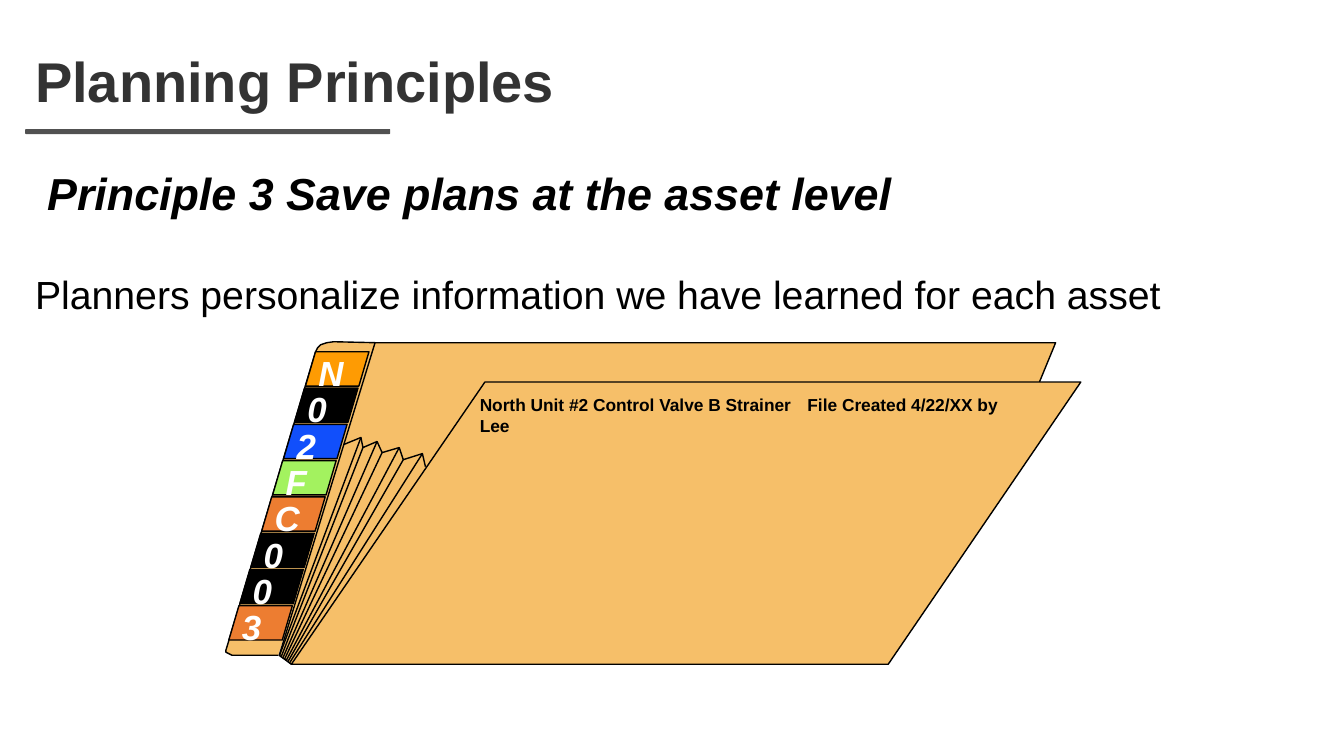
from lxml import etree
from pptx import Presentation
from pptx.dml.color import RGBColor
from pptx.enum.shapes import MSO_CONNECTOR, MSO_SHAPE
from pptx.enum.text import MSO_ANCHOR
from pptx.oxml.ns import qn
from pptx.util import Inches, Pt

TITLE = "Planning Principles"
PRINCIPLE = "Principle 3 Save plans at the asset level"
STATEMENT = "Planners personalize information we have learned for each asset"
FILE_LABEL = "North Unit #2 Control Valve B Strainer\tFile Created 4/22/XX by Lee"

TAGS = [("N", "FE9B03"), ("0", "000000"), ("2", "114FFB"), ("F", "A3F25F"),
        ("C", "ED7D31"), ("0", "000000"), ("0", "000000"), ("3", "ED7D31")]

MANILA = "F6BF69"
BLACK = "000000"
WHITE = "FFFFFF"

SPINE = [(3.73, 3.4), (3.31, 3.39), (3.24, 3.4), (3.18, 3.42), (3.15, 3.45),
         (3.13, 3.49), (2.25, 6.42), (2.24, 6.45), (2.24, 6.47), (2.26, 6.48),
         (2.3, 6.5), (2.76, 6.5)]
BACK_COVER = [(2.89, 6.59), (2.77, 6.5), (3.72, 3.4), (10.47, 3.4), (10.31, 3.79)]
FRONT_COVER = [(4.81, 3.79), (2.89, 6.59), (8.81, 6.59), (10.72, 3.79)]
PLEATS = [(3.41, 4.41), (3.58, 4.34), (3.6, 4.44), (3.74, 4.38), (3.79, 4.49),
          (3.96, 4.44), (4, 4.56), (4.19, 4.5), (4.22, 4.63)]
FAN_START, FAN_END = (2.77, 6.51), (2.87, 6.58)

TAG_FIRST, TAG_LAST = (3.03, 3.49), (2.27, 6.01)
TAG_WIDTH, TAG_HEIGHT, TAG_SLANT = 0.53, 0.34, 0.1


def color(value):
    return RGBColor.from_string(value)


def between(start, end, index, count):
    """Return point number index of count evenly spaced points."""
    share = index / (count - 1)
    return tuple(a + (b - a) * share for a, b in zip(start, end))


def add_outline(slide, points, fill=None, close=False):
    corners = [(Inches(x), Inches(y)) for x, y in points]
    builder = slide.shapes.build_freeform(*corners[0], scale=1.0)
    builder.add_line_segments(corners[1:], close=close)
    shape = builder.convert_to_shape()
    shape.shadow.inherit = False
    if fill:
        shape.fill.solid()
        shape.fill.fore_color.rgb = color(fill)
    else:
        shape.fill.background()
    shape.line.color.rgb = color(BLACK)
    shape.line.width = Pt(1)


def add_fold(slide, start, end):
    points = [Inches(value) for value in (*start, *end)]
    line = slide.shapes.add_connector(MSO_CONNECTOR.STRAIGHT, *points)
    line.line.color.rgb = color(BLACK)
    line.line.width = Pt(1)
    etree.SubElement(line._element.spPr, qn("a:effectLst"))


def add_text(slide, box, paragraphs, anchor=MSO_ANCHOR.TOP):
    shape = slide.shapes.add_textbox(*[Inches(value) for value in box])
    frame = shape.text_frame
    frame.word_wrap = True
    frame.vertical_anchor = anchor
    frame.text = "\n".join(paragraphs)
    return frame


def style(paragraph, size, font_color, bold=False, italic=False):
    for run in paragraph.runs:
        run.font.name = "Arial"
        run.font.size = Pt(size)
        run.font.bold = bold
        run.font.italic = italic
        run.font.color.rgb = color(font_color)


def add_headings(slide):
    rule = slide.shapes.add_shape(MSO_SHAPE.ROUNDED_RECTANGLE, Inches(0.25),
                                  Inches(1.28), Inches(3.62), Inches(0.05))
    rule.shadow.inherit = False
    rule.fill.solid()
    rule.fill.fore_color.rgb = color("515151")
    rule.line.fill.background()

    title = add_text(slide, (0.25, 0.25, 10.67, 0.94), [TITLE], MSO_ANCHOR.BOTTOM)
    title.paragraphs[0].line_spacing = 0.9
    style(title.paragraphs[0], 40, "333333", bold=True)

    body = add_text(slide, (0.25, 1.66, 12.83, 1.5), [PRINCIPLE, STATEMENT])
    principle, statement = body.paragraphs
    principle.line_spacing = statement.line_spacing = 0.9
    principle._p.get_or_add_pPr().set("marL", str(Inches(0.12)))
    statement.space_before = Pt(39)
    style(principle, 32, BLACK, bold=True, italic=True)
    style(statement, 28, BLACK)


def add_folder(slide):
    add_outline(slide, SPINE, MANILA)
    add_outline(slide, BACK_COVER, MANILA)
    add_outline(slide, FRONT_COVER, MANILA, close=True)
    add_outline(slide, PLEATS)
    ridges = PLEATS[1:-1]
    for index, ridge in enumerate(ridges):
        add_fold(slide, ridge, between(FAN_START, FAN_END, index, len(ridges)))

    label = add_text(slide, (4.66, 3.86, 5.41, 0.5), [FILE_LABEL]).paragraphs[0]
    tabs = etree.SubElement(label._p.get_or_add_pPr(), qn("a:tabLst"))
    etree.SubElement(tabs, qn("a:tab"), pos=str(Inches(3.25)), algn="l")
    style(label, 12.4, BLACK, bold=True)


def add_tags(slide):
    for index, (letter, fill) in enumerate(TAGS):
        left, top = between(TAG_FIRST, TAG_LAST, index, len(TAGS))
        right, bottom = left + TAG_WIDTH, top + TAG_HEIGHT
        corners = [(left + TAG_SLANT, top), (right + TAG_SLANT, top),
                   (right, bottom), (left, bottom)]
        add_outline(slide, corners, fill, close=True)
        frame = add_text(slide, (left + 0.03, top - 0.05, 0.6, 0.51), [letter])
        style(frame.paragraphs[0], 24.9, WHITE, bold=True, italic=True)


def main():
    presentation = Presentation()
    presentation.slide_width = Inches(13.33)
    presentation.slide_height = Inches(7.5)
    slide = presentation.slides.add_slide(presentation.slide_layouts[6])
    add_headings(slide)
    add_folder(slide)
    add_tags(slide)
    presentation.save("out.pptx")


if __name__ == "__main__":
    main()
